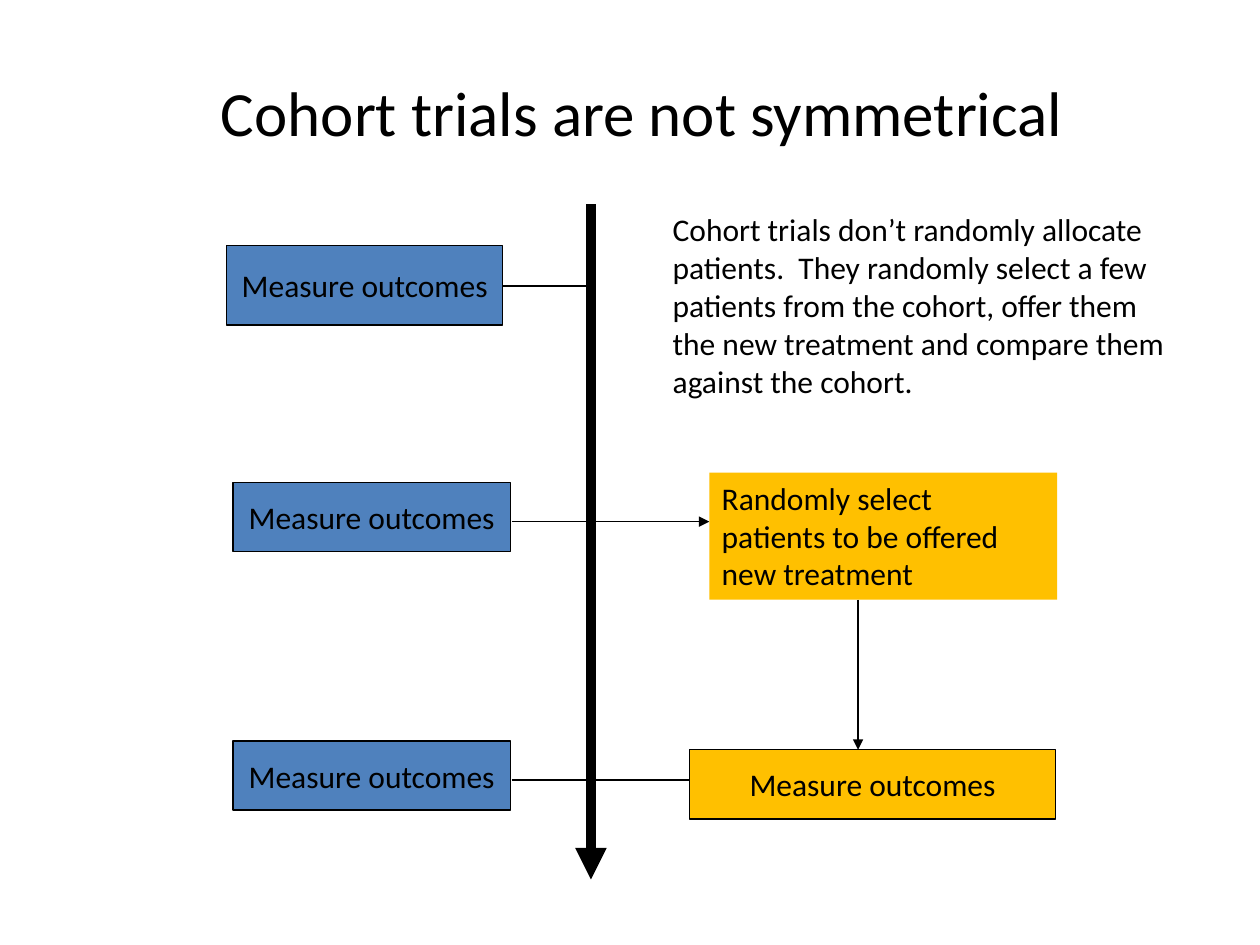
from pptx import Presentation
from pptx.dml.color import RGBColor
from pptx.enum.shapes import MSO_CONNECTOR, MSO_SHAPE
from pptx.enum.text import MSO_ANCHOR, PP_ALIGN
from pptx.oxml.ns import qn
from pptx.util import Inches, Pt
from lxml import etree

BLACK = RGBColor(0x00, 0x00, 0x00)
COHORT_BLUE = RGBColor(0x4F, 0x81, 0xBD)
TRIAL_GOLD = RGBColor(0xFF, 0xC0, 0x00)

TIMELINE_X = 4.69
SELECTION_Y = 4.14
FINAL_Y = 6.19
OUTCOMES = "Measure outcomes"


def write(frame, lines, size=18, align=PP_ALIGN.LEFT, anchor=MSO_ANCHOR.TOP, wrap=True):
    frame.text = "\n".join(lines)
    frame.word_wrap = wrap
    frame.vertical_anchor = anchor
    for paragraph in frame.paragraphs:
        paragraph.alignment = align
        for run in paragraph.runs:
            run.font.name = "Calibri"
            run.font.size = Pt(size)
            run.font.color.rgb = BLACK


def place(shape, left, top, width, height):
    shape.left, shape.top = Inches(left), Inches(top)
    shape.width, shape.height = Inches(width), Inches(height)


def add_box(slide, left, top, width, height, fill, outlined=True):
    box = slide.shapes.add_shape(
        MSO_SHAPE.RECTANGLE, Inches(left), Inches(top), Inches(width), Inches(height))
    box.shadow.inherit = False
    box.fill.solid()
    box.fill.fore_color.rgb = fill
    if outlined:
        box.line.color.rgb = BLACK
        box.line.width = Pt(0.75)
    else:
        box.line.fill.background()
    return box


def add_outcomes(slide, left, top, width, height, fill):
    box = add_box(slide, left, top, width, height, fill)
    write(box.text_frame, [OUTCOMES], align=PP_ALIGN.CENTER,
          anchor=MSO_ANCHOR.MIDDLE, wrap=False)


def add_line(slide, x1, y1, x2, y2, width=0.75, arrow=False):
    line = slide.shapes.add_connector(
        MSO_CONNECTOR.STRAIGHT, Inches(x1), Inches(y1), Inches(x2), Inches(y2))
    line.line.color.rgb = BLACK
    line.line.width = Pt(width)
    if arrow:
        etree.SubElement(line.line._get_or_add_ln(), qn("a:tailEnd"), type="triangle")
    etree.SubElement(line._element.spPr, qn("a:effectLst"))


def main():
    prs = Presentation()
    prs.slide_width, prs.slide_height = Inches(10), Inches(7.5)
    slide = prs.slides.add_slide(prs.slide_layouts[5])

    # Title
    title = slide.shapes.title
    place(title, 0.86, 0.21, 8.47, 1.34)
    write(title.text_frame, ["Cohort trials are not symmetrical"], size=36,
          align=PP_ALIGN.CENTER, anchor=MSO_ANCHOR.MIDDLE)

    # Timeline and its branches
    add_line(slide, TIMELINE_X, 1.62, TIMELINE_X, 6.98, width=6, arrow=True)
    add_line(slide, 3.98, 2.27, TIMELINE_X, 2.27)
    add_line(slide, 4.06, SELECTION_Y, TIMELINE_X, SELECTION_Y)
    add_line(slide, TIMELINE_X, SELECTION_Y, 5.63, SELECTION_Y, arrow=True)
    add_line(slide, 4.06, FINAL_Y, 5.47, FINAL_Y)
    add_line(slide, 6.81, 4.76, 6.81, 5.95, arrow=True)

    # Cohort measurements
    add_outcomes(slide, 1.8, 1.95, 2.19, 0.63, COHORT_BLUE)
    for top in (3.83, 5.88):
        add_outcomes(slide, 1.85, top, 2.2, 0.55, COHORT_BLUE)

    # Patients offered the new treatment
    selection = add_box(slide, 5.63, 3.75, 2.76, 1.01, TRIAL_GOLD, outlined=False)
    write(selection.text_frame,
          ["Randomly select", "patients to be offered new treatment"])
    add_outcomes(slide, 5.47, 5.95, 2.91, 0.55, TRIAL_GOLD)

    # Explanation
    explanation = slide.shapes.add_textbox(
        Inches(5.24), Inches(1.62), Inches(4.25), Inches(1.62))
    write(explanation.text_frame, [
        "Cohort trials don’t randomly allocate patients.  They randomly select "
        "a few patients from the cohort, offer them the new treatment and "
        "compare them against the cohort."])

    prs.save("out.pptx")


if __name__ == "__main__":
    main()
